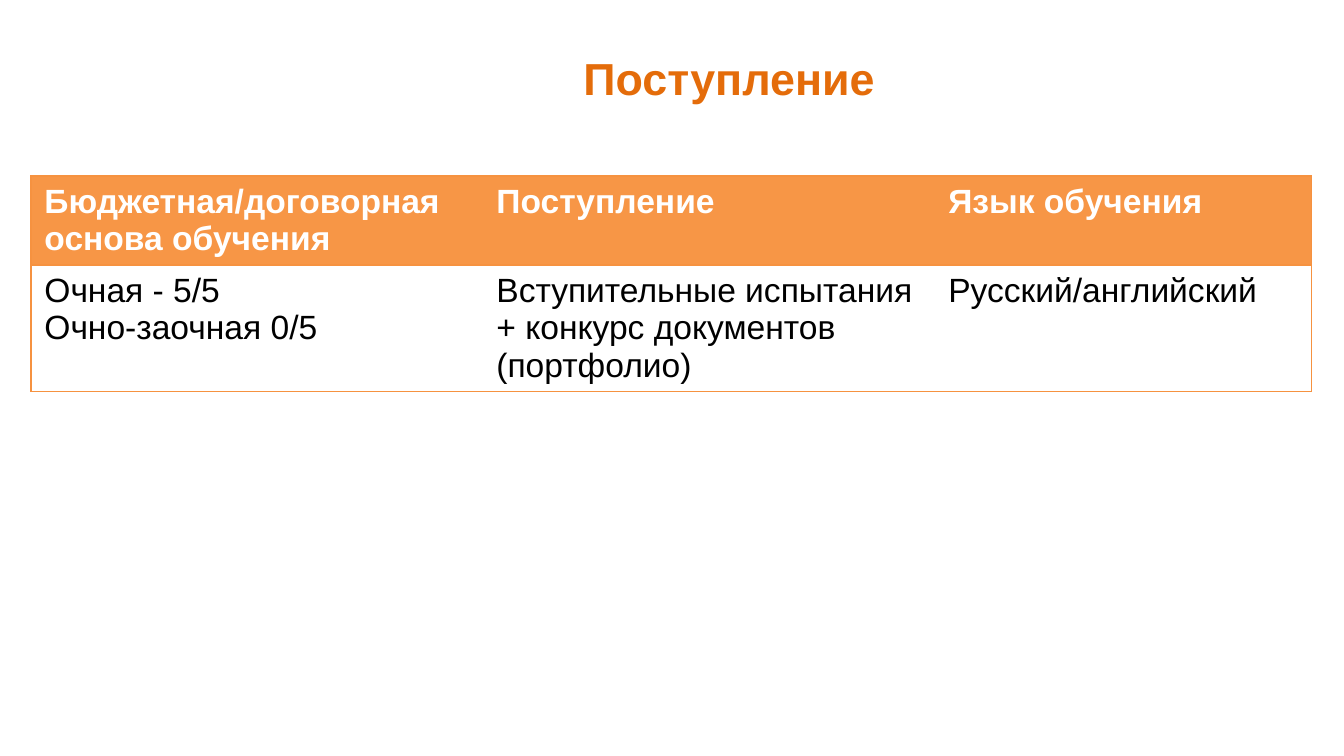
from dataclasses import dataclass

from lxml import etree
from pptx import Presentation
from pptx.dml.color import RGBColor
from pptx.enum.text import MSO_ANCHOR, PP_ALIGN
from pptx.oxml.ns import qn
from pptx.util import Emu, Pt

CENTER = PP_ALIGN.CENTER
LEFT = PP_ALIGN.LEFT
MIDDLE = MSO_ANCHOR.MIDDLE
TOP = MSO_ANCHOR.TOP

EMU_PER_PIXEL = 6804
TITLE_ONLY_LAYOUT = 5
FONT_NAME = "Arial"
BORDER_COLOR = "F69240"
BORDER_WIDTH = Pt(0.75)
COLUMN_WIDTHS = (452, 452, 377)


@dataclass(frozen=True)
class TextStyle:
    size: int
    color: str
    bold: bool
    alignment: PP_ALIGN = LEFT


@dataclass(frozen=True)
class TableRow:
    height: int
    fill: str
    style: TextStyle
    cells: tuple[tuple[str, ...], ...]


TITLE_STYLE = TextStyle(24, "E46C0A", True, CENTER)
ROWS = (
    TableRow(
        89,
        "F79646",
        TextStyle(18, "FFFFFF", True),
        (
            ("Бюджетная/договорная основа обучения",),
            ("Поступление",),
            ("Язык обучения",),
        ),
    ),
    TableRow(
        126,
        "FFFFFF",
        TextStyle(18, "000000", False),
        (
            ("Очная - 5/5", "Очно-заочная 0/5"),
            ("Вступительные испытания", "+ конкурс документов (портфолио)"),
            ("Русский/английский",),
        ),
    ),
)


def px(length: int) -> Emu:
    return Emu(length * EMU_PER_PIXEL)


def color(value: str) -> RGBColor:
    return RGBColor.from_string(value)


def write_text(text_frame, lines: tuple[str, ...], style: TextStyle) -> None:
    text_frame.word_wrap = True
    for index, line in enumerate(lines):
        paragraph = text_frame.paragraphs[0] if index == 0 else text_frame.add_paragraph()
        paragraph.alignment = style.alignment
        run = paragraph.add_run()
        run.text = line
        run.font.name = FONT_NAME
        run.font.size = Pt(style.size)
        run.font.bold = style.bold
        run.font.color.rgb = color(style.color)


def set_borders(cell, visible: dict[str, bool]) -> None:
    properties = cell._tc.get_or_add_tcPr()
    for side, shown in visible.items():
        line = etree.SubElement(properties, qn(f"a:ln{side}"), w=str(BORDER_WIDTH))
        if shown:
            fill = etree.SubElement(line, qn("a:solidFill"))
            etree.SubElement(fill, qn("a:srgbClr"), val=BORDER_COLOR)
        else:
            etree.SubElement(line, qn("a:noFill"))


def add_title(slide, text: str) -> None:
    title = slide.shapes.title
    title.left, title.top = px(220), px(42)
    title.width, title.height = px(1018), px(72)
    title.text_frame.vertical_anchor = MIDDLE
    write_text(title.text_frame, (text,), TITLE_STYLE)


def add_admission_table(slide, rows: tuple[TableRow, ...]) -> None:
    table = slide.shapes.add_table(
        len(rows),
        len(COLUMN_WIDTHS),
        px(31),
        px(176),
        px(sum(COLUMN_WIDTHS)),
        px(sum(row.height for row in rows)),
    ).table
    table.horz_banding = False
    for column, width in zip(table.columns, COLUMN_WIDTHS):
        column.width = px(width)
    for row_index, row in enumerate(rows):
        table.rows[row_index].height = px(row.height)
        for column_index, lines in enumerate(row.cells):
            cell = table.cell(row_index, column_index)
            cell.vertical_anchor = TOP
            set_borders(
                cell,
                {
                    "L": column_index == 0,
                    "R": column_index == len(COLUMN_WIDTHS) - 1,
                    "T": True,
                    "B": True,
                },
            )
            cell.fill.solid()
            cell.fill.fore_color.rgb = color(row.fill)
            write_text(cell.text_frame, lines, row.style)


def main() -> None:
    presentation = Presentation()
    presentation.slide_width = px(1344)
    presentation.slide_height = px(756)
    slide = presentation.slides.add_slide(presentation.slide_layouts[TITLE_ONLY_LAYOUT])
    add_title(slide, "Поступление")
    add_admission_table(slide, ROWS)
    presentation.save("out.pptx")


if __name__ == "__main__":
    main()
